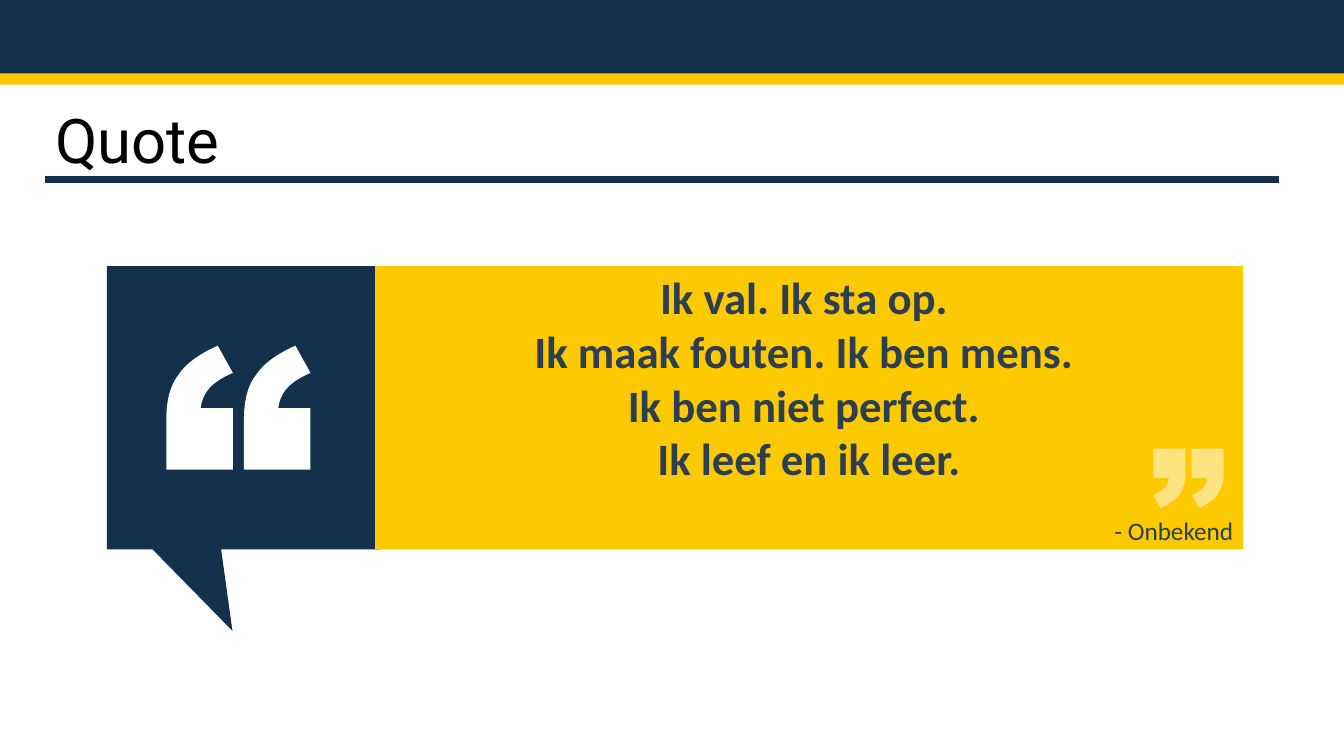
from dataclasses import dataclass

from lxml.etree import SubElement
from pptx import Presentation
from pptx.dml.color import RGBColor
from pptx.enum.shapes import MSO_CONNECTOR as Connector, MSO_SHAPE as Preset
from pptx.enum.text import MSO_ANCHOR as Anchor, MSO_AUTO_SIZE as AutoSize, PP_ALIGN as Align
from pptx.oxml.ns import qn
from pptx.util import Pt

EMU_PER_PX = 9144
COLOURS = {
    "navy": "13304C",
    "yellow": "FDC900",
    "white": "FFFFFF",
    "black": "000000",
    "slate": "2C3E50",
}
QUOTE_LINES = (
    "Ik val. Ik sta op. ",
    "Ik maak fouten. Ik ben mens. ",
    "Ik ben niet perfect. ",
    "Ik leef en ik leer.",
)

# Quote mark outline: one point is a line end, three points are a cubic curve.
MARK_START = (51, 0)
MARK_STEPS = (
    ((66, 27),),
    ((54, 32), (46, 38), (42, 43)),
    ((37, 49), (35, 55), (34, 62)),
    ((66, 62),),
    ((66, 123),),
    ((0, 123),),
    ((0, 73),),
    ((0, 54), (4, 39), (12, 29)),
    ((19, 18), (33, 8), MARK_START),
)


@dataclass(frozen=True)
class Block:
    left: int
    top: int
    width: int
    height: int
    colour: str
    preset: Preset = Preset.RECTANGLE
    adjustments: tuple[float, ...] = ()


@dataclass(frozen=True)
class QuoteMark:
    left: int
    top: int
    scale: float = 1
    rotation: int = 0
    opacity: int = 100


BANDS = (
    Block(0, 0, 1333, 73, "navy"),
    Block(0, 84, 1333, 666, "white"),
)
CALLOUT = Block(106, 264, 272, 281, "navy", Preset.RECTANGULAR_CALLOUT, (-0.042, 0.788))
PANEL = Block(372, 264, 861, 281, "yellow")
OPENING_MARKS = tuple(QuoteMark(left, 343) for left in (165, 242))
CLOSING_MARKS = tuple(QuoteMark(left, 445, 0.48, 180, 50) for left in (1182, 1144))


def px(length: float) -> int:
    return round(length * EMU_PER_PX)


def rgb(name: str) -> RGBColor:
    return RGBColor.from_string(COLOURS[name])


def paint(shape, colour: str) -> None:
    shape.shadow.inherit = False
    shape.fill.solid()
    shape.fill.fore_color.rgb = rgb(colour)
    shape.line.fill.background()


def draw_block(shapes, block: Block):
    shape = shapes.add_shape(
        block.preset, px(block.left), px(block.top), px(block.width), px(block.height)
    )
    for index, value in enumerate(block.adjustments):
        shape.adjustments[index] = value
    paint(shape, block.colour)
    return shape


def bend(shape, scale: float) -> None:
    """Turn the straight segments that stand for curves into cubic curves."""
    segments = list(shape.element.iter(qn("a:lnTo")))
    for segment, step in zip(segments, MARK_STEPS):
        if len(step) == 1:
            continue
        curve = segment.makeelement(qn("a:cubicBezTo"))
        for x, y in step:
            SubElement(curve, qn("a:pt"), x=str(px(scale * x)), y=str(px(scale * y)))
        segment.getparent().replace(segment, curve)


def draw_mark(shapes, mark: QuoteMark) -> None:
    ends = [
        (px(mark.left + mark.scale * x), px(mark.top + mark.scale * y))
        for x, y in (MARK_START, *(step[-1] for step in MARK_STEPS))
    ]
    builder = shapes.build_freeform(*ends[0])
    builder.add_line_segments(ends[1:], close=True)
    shape = builder.convert_to_shape()
    bend(shape, mark.scale)
    shape.rotation = mark.rotation
    paint(shape, "white")
    if mark.opacity < 100:
        colour = next(shape.element.iter(qn("a:srgbClr")))
        SubElement(colour, qn("a:alpha"), val=str(mark.opacity * 1000))


def write(para, text: str, *, size: int, colour: str, font: str = "Calibri",
          bold: bool = False, align: Align = Align.CENTER, before: int = 0) -> None:
    para.alignment = align
    para.space_before = Pt(before)
    span = para.add_run()
    span.text = text
    span.font.name = font
    span.font.size = Pt(size)
    span.font.bold = bold
    span.font.color.rgb = rgb(colour)


def draw_title(page) -> None:
    title = page.shapes.title
    title.left, title.top, title.width, title.height = px(45), px(104), px(1224), px(67)
    frame = title.text_frame
    frame.auto_size = AutoSize.NONE
    frame.vertical_anchor = Anchor.TOP
    para = frame.paragraphs[0]
    para.line_spacing = 0.9
    write(para, "Quote", size=44, colour="black", font="Roboto", align=Align.LEFT)
    # Bring the title in front of the white band.
    title.element.getparent().append(title.element)


def draw_rule(page) -> None:
    rule = page.shapes.add_connector(Connector.STRAIGHT, px(45), px(178), px(1269), px(178))
    rule.line.color.rgb = rgb("navy")
    rule.line.width = Pt(4.5)
    SubElement(rule.element.spPr, qn("a:effectLst"))


def draw_quote(shapes) -> None:
    frame = draw_block(shapes, PANEL).text_frame
    frame.word_wrap = True
    frame.vertical_anchor = Anchor.MIDDLE
    for index, line in enumerate(QUOTE_LINES):
        para = frame.add_paragraph() if index else frame.paragraphs[0]
        write(para, line, size=32, colour="slate", bold=True)
    write(frame.add_paragraph(), "- Onbekend", size=18, colour="slate",
          align=Align.RIGHT, before=22)


def main() -> None:
    deck = Presentation()
    deck.slide_width, deck.slide_height = px(1333), px(750)
    page = deck.slides.add_slide(deck.slide_layouts[5])
    page.background.fill.solid()
    page.background.fill.fore_color.rgb = rgb("yellow")
    for band in BANDS:
        draw_block(page.shapes, band)
    draw_rule(page)
    draw_title(page)
    bubble = page.shapes.add_group_shape().shapes
    draw_block(bubble, CALLOUT)
    for mark in OPENING_MARKS:
        draw_mark(bubble, mark)
    draw_quote(bubble)
    closing = page.shapes.add_group_shape().shapes
    for mark in CLOSING_MARKS:
        draw_mark(closing, mark)
    deck.save("out.pptx")


if __name__ == "__main__":
    main()
